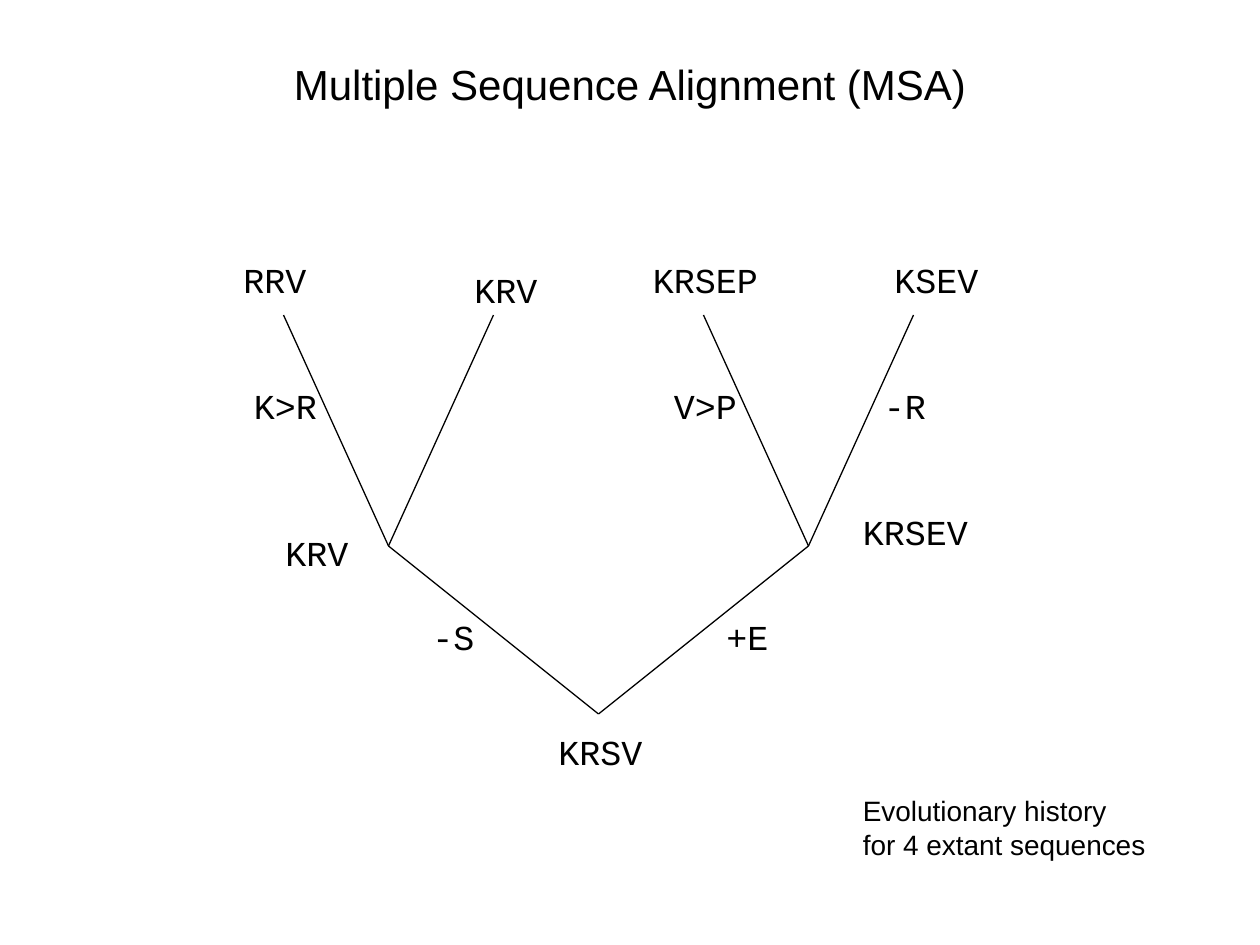
from typing import NamedTuple

from lxml.etree import SubElement
from pptx import Presentation
from pptx.dml.color import RGBColor
from pptx.enum.shapes import MSO_CONNECTOR
from pptx.enum.text import MSO_ANCHOR, MSO_AUTO_SIZE, PP_ALIGN
from pptx.oxml.ns import qn
from pptx.util import Inches, Pt

COLUMNS_PER_INCH = 12
BLACK = "000000"
SANS, MONO = "Arial", "Courier New"
LABEL_SIZE = 20
CHARACTER_WIDTH = 2  # columns taken by one label character
INSET = 1.2  # left and right insets of a text box, each in columns


class Point(NamedTuple):
    column: float
    row: float


class Label(NamedTuple):
    text: str
    corner: Point


class Branch(NamedTuple):
    start: Point
    end: Point


ROOT = Point(57, 68)
LEFT_NODE, RIGHT_NODE = Point(37, 52), Point(77, 52)
LEAF_SPREAD, LEAF_ROW = 10, 30

SEQUENCES = [
    Label("RRV", Point(22, 24)),
    Label("KRV", Point(44, 25)),
    Label("KRSEP", Point(61, 24)),
    Label("KSEV", Point(84, 24)),
    Label("KRV", Point(26, 50)),
    Label("KRSEV", Point(81, 48)),
    Label("KRSV", Point(52, 69)),
]
MUTATIONS = [
    Label("K>R", Point(23, 36)),
    Label("V>P", Point(63, 36)),
    Label("-R", Point(83, 36)),
    Label("-S", Point(40, 58)),
    Label("+E", Point(68, 58)),
]


def grid(units: float) -> int:
    return Inches(units / COLUMNS_PER_INCH)


def color(value: str) -> RGBColor:
    return RGBColor.from_string(value)


def format_paragraph(para, font_name: str, size: float) -> None:
    para.font.name = font_name
    para.font.size = Pt(size)
    para.font.color.rgb = color(BLACK)


def add_text(shapes, lines: list[str], corner: Point, width: float,
             height: float, font_name: str, size: float) -> None:
    box = shapes.add_textbox(grid(corner.column), grid(corner.row),
                             grid(width), grid(height))
    frame = box.text_frame
    frame.word_wrap = False
    frame.auto_size = MSO_AUTO_SIZE.SHAPE_TO_FIT_TEXT
    frame.text = "\n".join(lines)
    for para in frame.paragraphs:
        format_paragraph(para, font_name, size)


def add_label(shapes, label: Label) -> None:
    width = len(label.text) * CHARACTER_WIDTH + 2 * INSET
    add_text(shapes, [label.text], label.corner, width, 5.2, MONO, LABEL_SIZE)


def add_branch(shapes, branch: Branch) -> None:
    line = shapes.add_connector(
        MSO_CONNECTOR.STRAIGHT,
        grid(branch.start.column), grid(branch.start.row),
        grid(branch.end.column), grid(branch.end.row))
    line.line.color.rgb = color(BLACK)
    line.line.width = Pt(0.75)
    SubElement(line.element.spPr, qn("a:effectLst"))


def tree_branches() -> list[Branch]:
    branches = []
    for node in (LEFT_NODE, RIGHT_NODE):
        branches.append(Branch(node, ROOT))
        for offset in (-LEAF_SPREAD, LEAF_SPREAD):
            leaf = Point(node.column + offset, LEAF_ROW)
            branches.append(Branch(leaf, node))
    return branches


def set_title(page, text: str) -> None:
    title = page.shapes.title
    title.left, title.top = grid(9), grid(5)
    title.width, title.height = grid(102), grid(6)
    frame = title.text_frame
    frame.text = text
    frame.vertical_anchor = MSO_ANCHOR.MIDDLE
    frame.auto_size = MSO_AUTO_SIZE.NONE
    para = frame.paragraphs[0]
    para.alignment = PP_ALIGN.CENTER
    format_paragraph(para, SANS, 24)


def main() -> None:
    deck = Presentation()
    deck.slide_width, deck.slide_height = Inches(10), Inches(7.5)
    page = deck.slides.add_slide(deck.slide_layouts[5])
    set_title(page, "Multiple Sequence Alignment (MSA)")

    tree = page.shapes.add_group_shape()
    for branch in tree_branches():
        add_branch(tree.shapes, branch)
    for label in SEQUENCES + MUTATIONS:
        add_label(tree.shapes, label)

    add_text(page.shapes, ["Evolutionary history", "for 4 extant sequences"],
             Point(81, 75), 29.4, 7.7, SANS, 16)
    deck.save("out.pptx")


if __name__ == "__main__":
    main()
